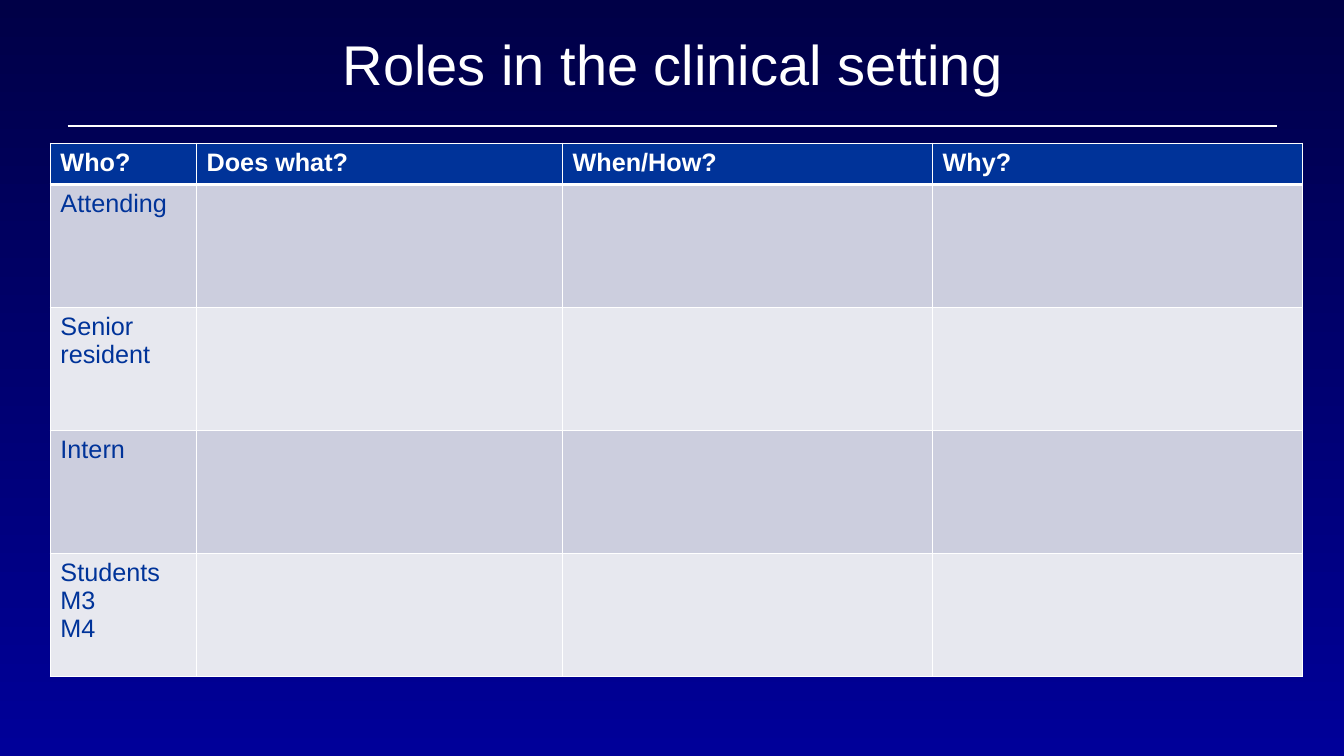
from dataclasses import dataclass

from lxml import etree
from pptx import Presentation
from pptx.dml.color import RGBColor
from pptx.enum.shapes import MSO_CONNECTOR
from pptx.enum.text import MSO_ANCHOR, PP_ALIGN
from pptx.oxml.ns import qn
from pptx.util import Inches, Pt

STRAIGHT = MSO_CONNECTOR.STRAIGHT
MIDDLE = MSO_ANCHOR.MIDDLE
CENTER = PP_ALIGN.CENTER


@dataclass(frozen=True)
class Theme:
    font: str = "Arial"
    title_size: int = 40
    table_size: int = 18
    white: str = "FFFFFF"
    blue: str = "003399"
    background: tuple[str, str] = ("000047", "000099")
    bands: tuple[str, str] = ("CCCEDE", "E7E8EF")
    rule_width: float = 2
    border_width: float = 1
    header_border_width: float = 3


@dataclass(frozen=True)
class Role:
    lines: tuple[str, ...]


THEME = Theme()
HEADINGS = ("Who?", "Does what?", "When/How?", "Why?")
ROLES = (
    Role(("Attending",)),
    Role(("Senior resident",)),
    Role(("Intern",)),
    Role(("Students", "M3", "M4")),
)
COLUMN_WIDTHS = (1.45, 3.63, 3.67, 3.67)
HEADER_HEIGHT = 0.41
ROLE_HEIGHT = 1.22
MARGIN = 0.67
CONTENT_WIDTH = 12
TITLE_HEIGHT = 1.25


def color(value: str) -> RGBColor:
    return RGBColor.from_string(value)


def paint_background(page) -> None:
    fill = page.background.fill
    fill.gradient()
    fill.gradient_angle = 270
    for stop, shade in zip(fill.gradient_stops, THEME.background):
        stop.color.rgb = color(shade)


def style_paragraph(para, size: int, shade: str, bold: bool = False) -> None:
    para.font.name = THEME.font
    para.font.size = Pt(size)
    para.font.bold = bold
    para.font.color.rgb = color(shade)


def add_title(page, text: str) -> None:
    box = page.shapes.add_textbox(
        Inches(MARGIN), 0, Inches(CONTENT_WIDTH), Inches(TITLE_HEIGHT))
    frame = box.text_frame
    frame.word_wrap = True
    frame.vertical_anchor = MIDDLE
    para = frame.paragraphs[0]
    para.text = text
    para.alignment = CENTER
    style_paragraph(para, THEME.title_size, THEME.white)


def add_rule(page) -> None:
    rule = page.shapes.add_connector(
        STRAIGHT, Inches(MARGIN), Inches(TITLE_HEIGHT),
        Inches(MARGIN + CONTENT_WIDTH), Inches(TITLE_HEIGHT))
    rule.line.color.rgb = color(THEME.white)
    rule.line.width = Pt(THEME.rule_width)
    etree.SubElement(rule.element.spPr, qn("a:effectLst"))


def set_borders(cell, top: float, bottom: float) -> None:
    properties = cell._tc.get_or_add_tcPr()
    side = THEME.border_width
    for tag, width in (("lnL", side), ("lnR", side), ("lnT", top), ("lnB", bottom)):
        line = etree.SubElement(properties, qn(f"a:{tag}"), w=str(Pt(width)))
        solid = etree.SubElement(line, qn("a:solidFill"))
        etree.SubElement(solid, qn("a:srgbClr"), val=THEME.white)


def fill_cell(cell, lines: tuple[str, ...], row: int) -> None:
    is_header = row == 0
    thin, thick = THEME.border_width, THEME.header_border_width
    # Borders come before the fill in the cell properties
    set_borders(cell, thick if row == 1 else thin, thick if is_header else thin)
    cell.fill.solid()
    cell.fill.fore_color.rgb = color(
        THEME.blue if is_header else THEME.bands[(row - 1) % 2])
    cell.text = "\n".join(lines)
    for para in cell.text_frame.paragraphs:
        style_paragraph(para, THEME.table_size,
                        THEME.white if is_header else THEME.blue, is_header)


def add_roles_table(page) -> None:
    heights = (HEADER_HEIGHT,) + (ROLE_HEIGHT,) * len(ROLES)
    table = page.shapes.add_table(
        len(heights), len(HEADINGS), Inches(0.5), Inches(1.42),
        Inches(sum(COLUMN_WIDTHS)), Inches(sum(heights))).table
    for column, width in zip(table.columns, COLUMN_WIDTHS):
        column.width = Inches(width)
    for row, height in zip(table.rows, heights):
        row.height = Inches(height)

    for index, heading in enumerate(HEADINGS):
        fill_cell(table.cell(0, index), (heading,), 0)
    for row_index, role in enumerate(ROLES, start=1):
        for index in range(len(HEADINGS)):
            lines = role.lines if index == 0 else ()
            fill_cell(table.cell(row_index, index), lines, row_index)


def main() -> None:
    deck = Presentation()
    deck.slide_width = Inches(13.33)
    deck.slide_height = Inches(7.5)
    page = deck.slides.add_slide(deck.slide_layouts[6])

    # Background, title and the rule below it
    paint_background(page)
    add_rule(page)
    add_title(page, "Roles in the clinical setting")

    # Table of roles, with cells left open to fill in
    add_roles_table(page)
    deck.save("out.pptx")


if __name__ == "__main__":
    main()
